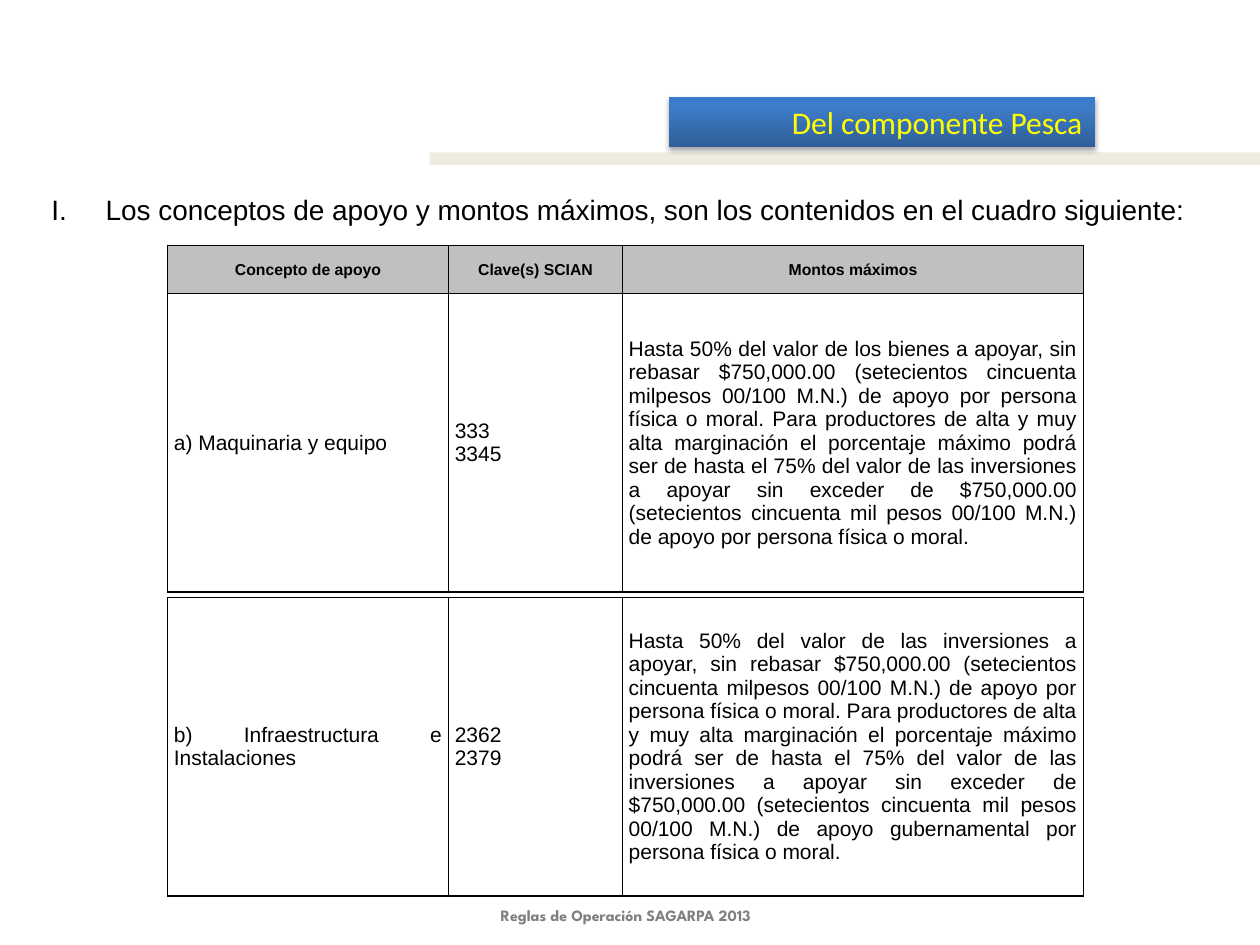
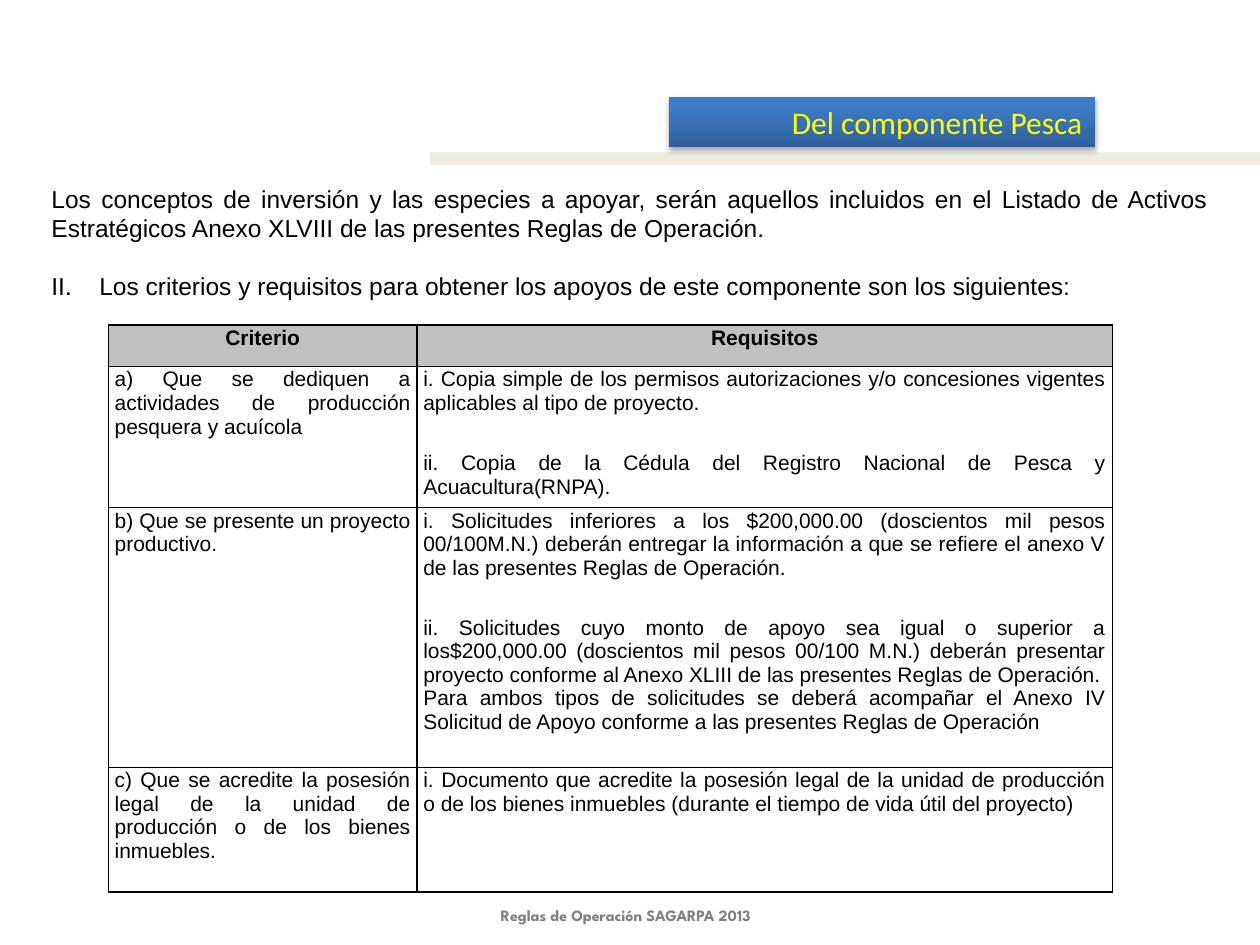
from dataclasses import dataclass

from lxml.etree import SubElement
from pptx import Presentation
from pptx.dml.color import RGBColor
from pptx.enum.shapes import MSO_SHAPE as Preset
from pptx.enum.text import MSO_ANCHOR as Anchor, PP_ALIGN as Align
from pptx.oxml.ns import qn
from pptx.slide import Slide
from pptx.util import Inches, Pt

BLACK = RGBColor(0x00, 0x00, 0x00)
YELLOW = RGBColor(0xFF, 0xFF, 0x00)
GRAY = RGBColor(0x80, 0x80, 0x80)
HEADER_FILL = RGBColor(0xC0, 0xC0, 0xC0)
BAND_FILL = RGBColor(0xEE, 0xEC, 0xE1)
BANNER_STOPS = (
    (0, RGBColor(0x2F, 0x5F, 0x99)),
    (80, RGBColor(0x3D, 0x7C, 0xC7)),
    (100, RGBColor(0x3A, 0x7C, 0xCB)),
)

BODY_FONT = "Arial"
TITLE_FONT = "Calibri"
FOOTER_FONT = "League Spartan"

TITLE = "Del componente Pesca"
FOOTER = "Reglas de Operación SAGARPA 2013"


@dataclass(frozen=True)
class Place:
    left: float
    top: float
    width: float
    height: float

    def lengths(self) -> tuple:
        return tuple(Inches(n) for n in (self.left, self.top, self.width, self.height))


@dataclass(frozen=True)
class Grid:
    """A bordered table; each cell is a tuple of paragraphs."""
    left: float
    top: float
    columns: tuple
    heights: tuple
    rows: tuple
    has_header: bool = True
    header_size: int = 12
    anchor: Anchor = Anchor.TOP
    paragraph_gap: int = 0


AID_COLUMNS = (2.23, 1.38, 3.66)

MACHINERY = Grid(
    1.33, 1.95, AID_COLUMNS, (0.38, 2.37),
    (
        (("Concepto de apoyo",), ("Clave(s) SCIAN",), ("Montos máximos",)),
        (
            ("a) Maquinaria y equipo",),
            ("333", "3345"),
            ("Hasta 50% del valor de los bienes a apoyar, sin rebasar $750,000.00 "
             "(setecientos cincuenta milpesos 00/100 M.N.) de apoyo por persona física "
             "o moral. Para productores de alta y muy alta marginación el porcentaje "
             "máximo podrá ser de hasta el 75% del valor de las inversiones a apoyar "
             "sin exceder de $750,000.00 (setecientos cincuenta mil pesos 00/100 M.N.) "
             "de apoyo por persona física o moral.",),
        ),
    ),
    header_size=9, anchor=Anchor.MIDDLE,
)

INFRASTRUCTURE = Grid(
    1.33, 4.74, AID_COLUMNS, (2.37,),
    (
        (
            ("b) Infraestructura e Instalaciones",),
            ("2362", "2379"),
            ("Hasta 50% del valor de las inversiones a apoyar, sin rebasar $750,000.00 "
             "(setecientos cincuenta milpesos 00/100 M.N.) de apoyo por persona física "
             "o moral. Para productores de alta y muy alta marginación el porcentaje "
             "máximo podrá ser de hasta el 75% del valor de las inversiones a apoyar "
             "sin exceder de $750,000.00 (setecientos cincuenta mil pesos 00/100 M.N.) "
             "de apoyo gubernamental por persona física o moral.",),
        ),
    ),
    has_header=False, anchor=Anchor.MIDDLE,
)

REQUIREMENTS = Grid(
    0.86, 2.58, (2.45, 5.52), (0.33, 1.12, 2.06, 0.99),
    (
        (("Criterio",), ("Requisitos",)),
        (
            ("a) Que se dediquen a actividades de producción pesquera y acuícola",),
            ("i. Copia simple de los permisos autorizaciones y/o concesiones vigentes "
             "aplicables al tipo de proyecto.",
             "ii. Copia de la Cédula del Registro Nacional de Pesca y "
             "Acuacultura(RNPA)."),
        ),
        (
            ("b) Que se presente un proyecto productivo.",),
            ("i. Solicitudes inferiores a los $200,000.00 (doscientos mil pesos "
             "00/100M.N.) deberán entregar la información a que se refiere el "
             "anexo V de las presentes Reglas de Operación.",
             "ii. Solicitudes cuyo monto de apoyo sea igual o superior a "
             "los$200,000.00 (doscientos mil pesos 00/100 M.N.) deberán presentar "
             "proyecto conforme al Anexo XLIII de las presentes Reglas de Operación.",
             "Para ambos tipos de solicitudes se deberá acompañar el Anexo IV "
             "Solicitud de Apoyo conforme a las presentes Reglas de Operación"),
        ),
        (
            ("c) Que se acredite la posesión legal de la unidad de producción o de "
             "los bienes inmuebles.",),
            ("i. Documento que acredite la posesión legal de la unidad de producción "
             "o de los bienes inmuebles (durante el tiempo de vida útil del "
             "proyecto)",),
        ),
    ),
    paragraph_gap=21,
)


def write(frame, text: str, *, size: int, font: str = BODY_FONT,
          color: RGBColor = BLACK, bold: bool = False, align: Align = Align.LEFT,
          before: int = 0, roman: int = 0, hang: float = 0):
    """Add a paragraph; roman numbers it, with its text set in by hang inches."""
    para = frame.paragraphs[0]
    if para.runs:
        para = frame.add_paragraph()
    para.alignment = align
    if before:
        para.space_before = Pt(before)
    if roman:
        properties = para._p.get_or_add_pPr()
        properties.set("marL", str(Inches(hang)))
        properties.set("indent", str(-Inches(hang)))
        SubElement(properties, qn("a:buFont"), typeface=font)
        SubElement(properties, qn("a:buAutoNum"), type="romanUcPeriod",
                   startAt=str(roman))
    span = para.add_run()
    span.text = text
    span.font.name = font
    span.font.size = Pt(size)
    span.font.bold = bold
    span.font.color.rgb = color


def add_text_frame(page: Slide, place: Place, wrap: bool = True):
    frame = page.shapes.add_textbox(*place.lengths()).text_frame
    frame.word_wrap = wrap
    return frame


def add_rectangle(page: Slide, place: Place):
    box = page.shapes.add_shape(Preset.RECTANGLE, *place.lengths())
    box.shadow.inherit = False
    box.line.fill.background()
    return box


def add_color(parent, color: RGBColor):
    return SubElement(parent, qn("a:srgbClr"), val=str(color))


def add_banner(page: Slide) -> None:
    banner = add_rectangle(page, Place(5.31, 0.77, 3.38, 0.4))
    banner.fill.gradient()
    banner.fill.gradient_angle = 90
    properties = banner._element.spPr
    stops = properties.find(".//" + qn("a:gsLst"))
    for stop in list(stops):
        stops.remove(stop)
    for percent, color in BANNER_STOPS:
        add_color(SubElement(stops, qn("a:gs"), pos=str(percent * 1000)), color)
    shadow = SubElement(properties.find(qn("a:effectLst")), qn("a:outerShdw"),
                        blurRad=str(Pt(3.1)), dist=str(Pt(1.8)),
                        dir=str(90 * 60000), rotWithShape="0")
    SubElement(add_color(shadow, BLACK), qn("a:alpha"), val="35000")
    banner.text_frame.vertical_anchor = Anchor.MIDDLE
    write(banner.text_frame, TITLE, size=18, font=TITLE_FONT, color=YELLOW,
          align=Align.RIGHT)


def add_page(deck) -> Slide:
    """Add a blank slide with the shared band, footer and title banner."""
    page = deck.slides.add_slide(deck.slide_layouts[6])
    band = add_rectangle(page, Place(3.41, 1.21, 6.59, 0.1))
    band.fill.solid()
    band.fill.fore_color.rgb = BAND_FILL
    footer = add_text_frame(page, Place(3.74, 7.14, 2.45, 0.25), wrap=False)
    footer.vertical_anchor = Anchor.MIDDLE
    write(footer, FOOTER, size=9, font=FOOTER_FONT, color=GRAY, bold=True,
          align=Align.CENTER)
    add_banner(page)
    return page


def add_borders(cell) -> None:
    properties = cell._tc.get_or_add_tcPr()
    for side in ("lnL", "lnR", "lnT", "lnB"):
        line = SubElement(properties, qn(f"a:{side}"), w=str(Pt(1)))
        add_color(SubElement(line, qn("a:solidFill")), BLACK)


def fill_cell(cell, texts: tuple, grid: Grid, is_header: bool) -> None:
    cell.margin_left = cell.margin_right = Inches(0.05)
    cell.margin_top = cell.margin_bottom = Inches(0.01)
    cell.vertical_anchor = grid.anchor
    add_borders(cell)
    if is_header:
        cell.fill.solid()
        cell.fill.fore_color.rgb = HEADER_FILL
    else:
        cell.fill.background()
    for index, text in enumerate(texts):
        write(cell.text_frame, text, bold=is_header,
              size=grid.header_size if is_header else 12,
              align=Align.CENTER if is_header else Align.JUSTIFY,
              before=grid.paragraph_gap if index == 1 else 0)


def add_grid(page: Slide, grid: Grid) -> None:
    place = Place(grid.left, grid.top, sum(grid.columns), sum(grid.heights))
    table = page.shapes.add_table(len(grid.rows), len(grid.columns),
                                  *place.lengths()).table
    table.first_row = grid.has_header
    table.horz_banding = False
    for column, width in zip(table.columns, grid.columns):
        column.width = Inches(width)
    for row_index, (height, cells) in enumerate(zip(grid.heights, grid.rows)):
        table.rows[row_index].height = Inches(height)
        is_header = grid.has_header and row_index == 0
        for column_index, texts in enumerate(cells):
            fill_cell(table.cell(row_index, column_index), texts, grid, is_header)


def build_amounts(deck) -> None:
    page = add_page(deck)
    intro = add_text_frame(page, Place(0.31, 1.48, 9.31, 0.37))
    write(intro, "Los conceptos de apoyo y montos máximos, son los contenidos en el "
          "cuadro siguiente:", size=16, roman=1, hang=0.43)
    add_grid(page, MACHINERY)
    add_grid(page, INFRASTRUCTURE)


def build_requirements(deck) -> None:
    page = add_page(deck)
    intro = add_text_frame(page, Place(0.31, 1.41, 9.38, 1.04))
    write(intro, "Los conceptos de inversión y las especies a apoyar, serán aquellos "
          "incluidos en el Listado de Activos Estratégicos Anexo XLVIII de las "
          "presentes Reglas de Operación.", size=14, align=Align.JUSTIFY)
    write(intro, "Los criterios y requisitos para obtener los apoyos de este "
          "componente son los siguientes:", size=14, align=Align.JUSTIFY,
          before=16, roman=2, hang=0.38)
    add_grid(page, REQUIREMENTS)


def main() -> None:
    deck = Presentation()
    deck.slide_width, deck.slide_height = Inches(10), Inches(7.5)
    build_amounts(deck)
    build_requirements(deck)
    deck.save("out.pptx")


if __name__ == "__main__":
    main()
